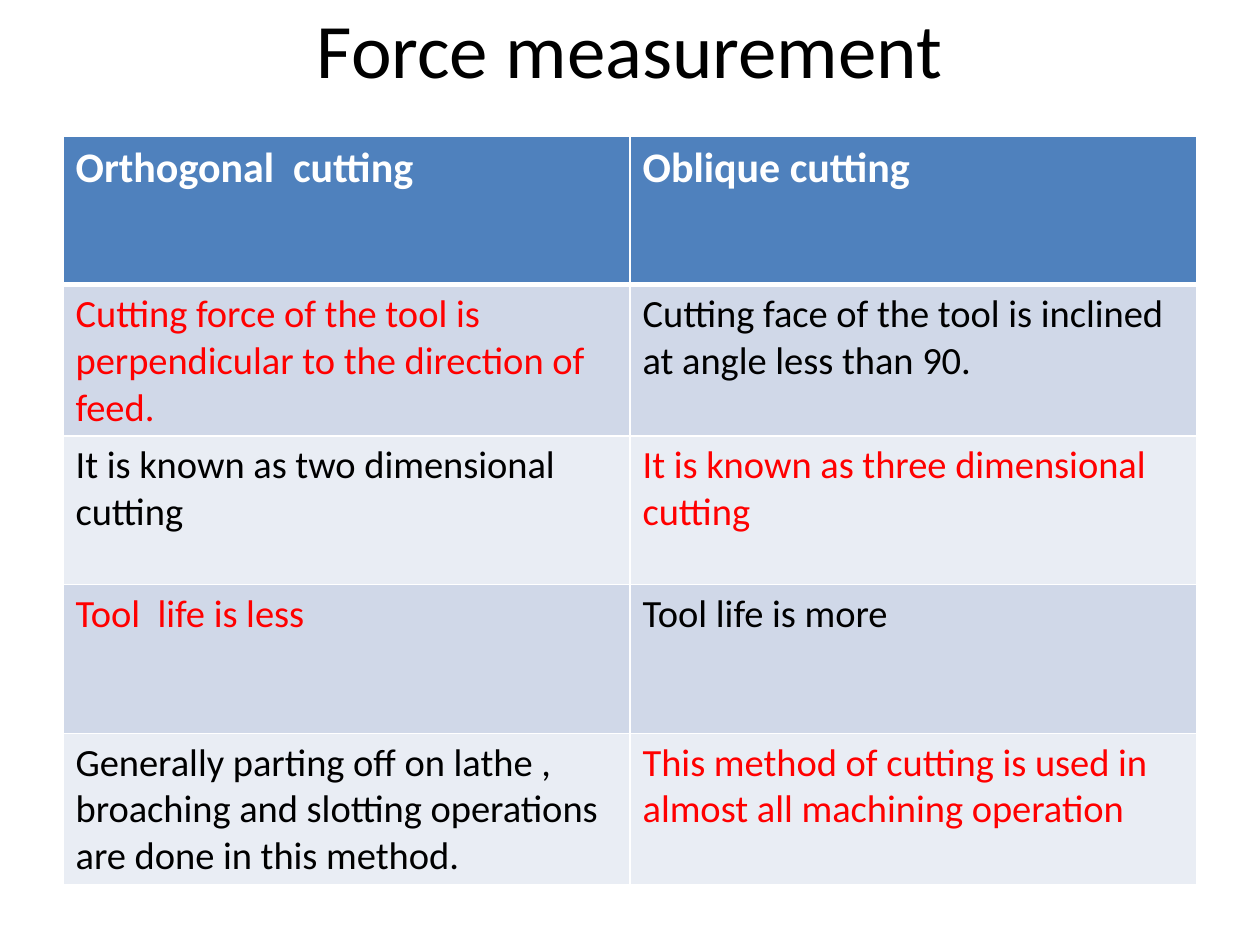
from dataclasses import dataclass

from lxml import etree
from pptx import Presentation
from pptx import util as u
from pptx.dml.color import RGBColor
from pptx.enum import text
from pptx.oxml import ns

BLACK = RGBColor(0x00, 0x00, 0x00)
WHITE = RGBColor(0xFF, 0xFF, 0xFF)
RED = RGBColor(0xFF, 0x00, 0x00)
BLUE = RGBColor(0x4F, 0x81, 0xBD)
BANDS = (RGBColor(0xD0, 0xD8, 0xE8), RGBColor(0xE9, 0xED, 0xF4))
FONT = "Calibri"


@dataclass
class Style:
    size: float
    color: RGBColor
    bold: bool = False


TITLE = Style(44, BLACK)
HEAD = Style(24, WHITE, True)
PLAIN = Style(22, BLACK)
MARKED = Style(22, RED)

ROWS = (
    ("Orthogonal  cutting", "Oblique cutting"),
    ("Cutting force of the tool is perpendicular to the direction of feed.",
     "Cutting face of the tool is inclined at angle less than 90."),
    ("It is known as two dimensional cutting",
     "It is known as three dimensional cutting"),
    ("Tool  life is less", "Tool life is more"),
    ("Generally parting off on lathe , broaching and slotting operations "
     "are done in this method.",
     "This method of cutting is used in almost all machining operation"),
)


def write(frame, words: str, style: Style) -> None:
    frame.text = words
    font = frame.paragraphs[0].runs[0].font
    font.name = FONT
    font.size = u.Pt(style.size)
    font.bold = style.bold
    font.color.rgb = style.color


def edge(cell, row: int) -> None:
    """Draw white cell borders, thicker under the header."""
    widths = {"lnL": 1, "lnR": 1, "lnT": 3 if row == 1 else 1,
              "lnB": 3 if row == 0 else 1}
    props = cell._tc.get_or_add_tcPr()
    for spot, (tag, width) in enumerate(widths.items()):
        line = etree.Element(ns.qn(f"a:{tag}"), w=str(u.Pt(width)))
        fill = etree.SubElement(line, ns.qn("a:solidFill"))
        etree.SubElement(fill, ns.qn("a:srgbClr"), val=str(WHITE))
        props.insert(spot, line)


def add_title(slide) -> None:
    box = slide.shapes.add_textbox(u.Inches(0.5), u.Inches(-0.25),
                                   u.Inches(9), u.Inches(1.25))
    frame = box.text_frame
    frame.word_wrap = True
    frame.vertical_anchor = text.MSO_ANCHOR.MIDDLE
    write(frame, "Force measurement", TITLE)
    frame.paragraphs[0].alignment = text.PP_ALIGN.CENTER


def add_grid(slide) -> None:
    table = slide.shapes.add_table(
        len(ROWS), 2, u.Inches(0.5), u.Inches(1.08),
        u.Inches(9), u.Inches(1.18 * len(ROWS))).table
    for r, words in enumerate(ROWS):
        for c, word in enumerate(words):
            cell = table.cell(r, c)
            cell.fill.solid()
            cell.fill.fore_color.rgb = BANDS[(r - 1) % 2] if r else BLUE
            edge(cell, r)
            # Red text alternates between the two columns
            body = PLAIN if (r + c) % 2 == 0 else MARKED
            write(cell.text_frame, word, body if r else HEAD)


def main() -> None:
    deck = Presentation()
    deck.slide_width, deck.slide_height = u.Inches(10), u.Inches(7.5)
    slide = deck.slides.add_slide(deck.slide_layouts[6])
    add_title(slide)
    add_grid(slide)
    deck.save("out.pptx")


if __name__ == "__main__":
    main()
